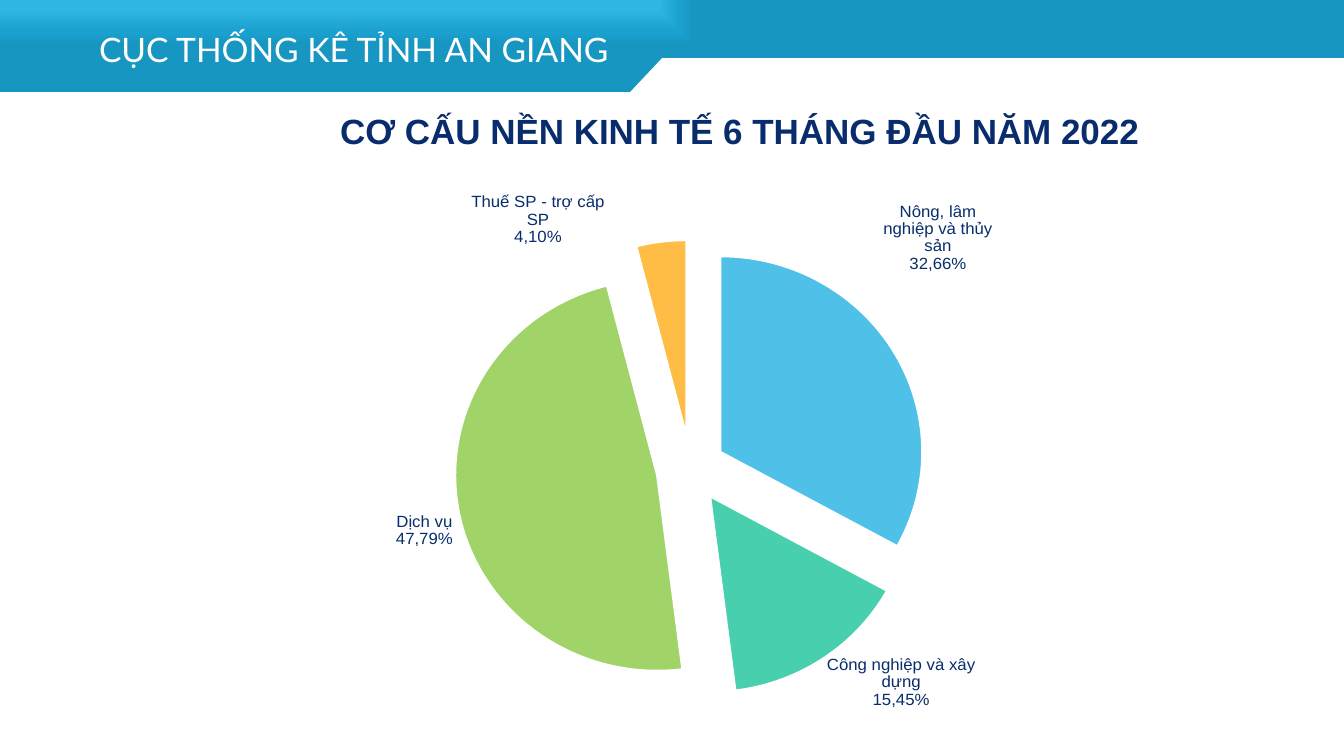
from pptx import Presentation
from pptx.chart.data import CategoryChartData
from pptx.dml.color import RGBColor
from pptx.enum.chart import XL_CHART_TYPE, XL_LABEL_POSITION
from pptx.enum.text import MSO_AUTO_SIZE, PP_ALIGN
from pptx.oxml import parse_xml
from pptx.oxml.ns import nsdecls
from pptx.util import Pt

WHITE = RGBColor(0xFF, 0xFF, 0xFF)
BLACK = RGBColor(0x00, 0x00, 0x00)
NAVY = RGBColor(0x09, 0x2D, 0x6C)
BLUE = RGBColor(0x4F, 0xC1, 0xE9)
TEAL = RGBColor(0x48, 0xCF, 0xAD)
GREEN = RGBColor(0xA0, 0xD4, 0x68)
AMBER = RGBColor(0xFF, 0xBD, 0x45)
STOPS = [
    (0, RGBColor(0x30, 0xB6, 0xE5)),
    (23, RGBColor(0x30, 0xB6, 0xE5)),
    (69, RGBColor(0x1A, 0xA1, 0xD0)),
    (97, RGBColor(0x18, 0x96, 0xC2)),
]
BANNER = [(0, 92), (630, 92), (662, 58), (1428, 58), (1428, -1), (0, -1)]
SECTORS = [
    ("Nông, lâm nghiệp và thủy sản", 33, "32,66%", BLUE, (-0.02, -0.15), (0.2, 0.12)),
    ("Công nghiệp và xây dựng", 15, "15,45%", TEAL, None, None),
    ("Dịch vụ", 48, "47,79%", GREEN, None, None),
    ("Thuế SP - trợ cấp SP", 4, "4,10%", AMBER, (-0.07, 0), None),
]


def px(num):
    return round(num * 12192000 / 1344)


def style(font, name, size, color, bold=False):
    font.name, font.size, font.bold = name, Pt(size), bold
    font.color.rgb = color


def add_banner(slide):
    pen = slide.shapes.build_freeform(*BANNER[0], scale=px(1000) / 1000)
    pen.add_line_segments(BANNER[1:], close=True)
    shape = pen.convert_to_shape()
    shape.shadow.inherit = False
    shape.line.fill.background()
    shape.fill.background()
    stops = "".join(
        f'<a:gs pos="{pos * 1000}"><a:srgbClr val="{color}"/></a:gs>'
        for pos, color in STOPS
    )
    grad = parse_xml(
        f'<a:gradFill {nsdecls("a")} rotWithShape="1"><a:gsLst>{stops}</a:gsLst>'
        '<a:path path="rect"><a:fillToRect r="100000" b="100000"/></a:path>'
        '</a:gradFill>'
    )
    props = shape._element.spPr
    props.replace(props.find("{*}noFill"), grad)


def add_text(slide, text, box, align, *look):
    shape = slide.shapes.add_textbox(*map(px, box))
    frame = shape.text_frame
    frame.word_wrap = True
    frame.auto_size = MSO_AUTO_SIZE.SHAPE_TO_FIT_TEXT
    frame.margin_left = frame.margin_right = 0
    frame.margin_top = frame.margin_bottom = 0
    para = frame.paragraphs[0]
    para.text, para.alignment = text, align
    style(para.font, *look)


def layout(*parts, tag="c:layout"):
    body = "".join(f'<c:{name} val="{val}"/>' for name, val in parts)
    return parse_xml(
        f'<{tag} {nsdecls("c")} '
        'xmlns:c15="http://schemas.microsoft.com/office/drawing/2012/chart">'
        f'<c:manualLayout>{body}</c:manualLayout></{tag}>'
    )


def add_label(series, index, text, shift, size):
    label = series.points[index].data_label
    label.text_frame.text = text
    label.position = XL_LABEL_POSITION.OUTSIDE_END
    for para in label.text_frame.paragraphs:
        style(para.font, "Arial", 12, NAVY)
        for run in para.runs:
            style(run.font, "Arial", 12, NAVY)
    node = series._element.xpath(f"c:dLbls/c:dLbl[c:idx/@val={index}]")[0]
    if shift:
        node.find("{*}idx").addnext(layout(*zip("xy", shift)))
    if size:
        extra = parse_xml(
            f'<c:extLst {nsdecls("c")}>'
            '<c:ext uri="{CE6537A1-D6FC-4f65-9D91-7224C49458BB}"/></c:extLst>'
        )
        extra[0].append(layout(*zip("wh", size), tag="c15:layout"))
        node.append(extra)


def add_pie(slide, box):
    data = CategoryChartData()
    data.categories = [sector[0] for sector in SECTORS]
    data.add_series("Series 1", [sector[1] for sector in SECTORS])
    frame = slide.shapes.add_chart(XL_CHART_TYPE.PIE, *map(px, box), data)
    chart = frame.chart
    chart.has_title = chart.has_legend = False
    style(chart.font, "Lato", 10, BLACK)
    plot = chart.plots[0]
    plot.vary_by_categories = True
    series = plot.series[0]
    series.format.line.fill.background()
    series._element.spPr.addnext(
        parse_xml(f'<c:explosion {nsdecls("c")} val="17"/>')
    )
    labels = series.data_labels
    labels.show_percentage = labels.show_category_name = True
    labels.show_value = False
    labels.position = XL_LABEL_POSITION.OUTSIDE_END
    style(labels.font, "Arial", 12, NAVY)
    for lead in series._element.xpath("c:dLbls/c:showLeaderLines"):
        lead.set("val", "0")
    for index, (name, value, share, color, shift, size) in enumerate(SECTORS):
        look = series.points[index].format
        look.fill.solid()
        look.fill.fore_color.rgb = color
        look.line.color.rgb = WHITE
        look.line.width = Pt(1.5)
        add_label(series, index, f"{name}\n{share}", shift, size)
    area = chart._chartSpace.chart.plotArea
    for old in area.findall("{*}layout"):
        area.remove(old)
    area.insert(0, layout(
        ("layoutTarget", "inner"), ("xMode", "edge"), ("yMode", "edge"),
        ("x", 0.08), ("y", 0.09), ("w", 0.92), ("h", 0.89),
    ))


def main():
    """Build the slide on the structure of An Giang's economy."""
    deck = Presentation()
    deck.slide_width, deck.slide_height = px(1344), px(756)
    slide = deck.slides.add_slide(deck.slide_layouts[6])
    add_banner(slide)
    add_text(slide, "CỤC THỐNG KÊ TỈNH AN GIANG", (99, 29, 563, 40),
             PP_ALIGN.LEFT, "Lato", 24, WHITE)
    add_text(slide, "CƠ CẤU NỀN KINH TẾ 6 THÁNG ĐẦU NĂM 2022", (328, 110, 823, 42),
             PP_ALIGN.CENTER, "Arial", 25, NAVY, True)
    add_pie(slide, (260, 184, 798, 531))
    deck.save("out.pptx")


if __name__ == "__main__":
    main()
